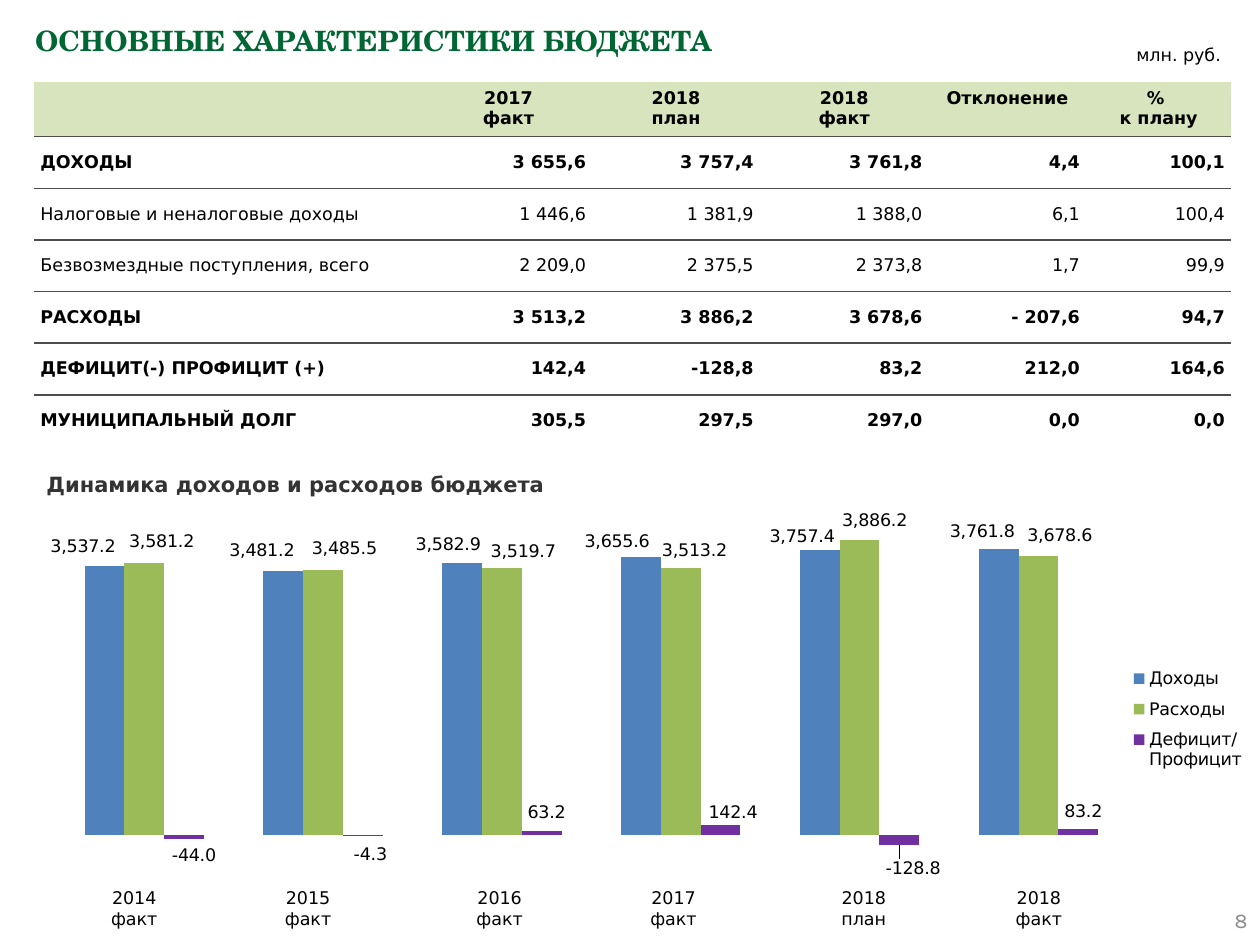
from dataclasses import dataclass

from lxml import etree
from pptx import Presentation
from pptx.chart.data import CategoryChartData
from pptx.dml.color import RGBColor
from pptx.enum.chart import XL_CHART_TYPE, XL_LABEL_POSITION, XL_LEGEND_POSITION
from pptx.enum.shapes import MSO_SHAPE
from pptx.enum.text import MSO_ANCHOR, PP_ALIGN
from pptx.oxml.ns import qn
from pptx.util import Inches, Pt

LEFT, CENTER, RIGHT = PP_ALIGN.LEFT, PP_ALIGN.CENTER, PP_ALIGN.RIGHT
TOP, MIDDLE = MSO_ANCHOR.TOP, MSO_ANCHOR.MIDDLE
COLUMNS = XL_CHART_TYPE.COLUMN_CLUSTERED
OUTSIDE = XL_LABEL_POSITION.OUTSIDE_END
LEGEND_RIGHT = XL_LEGEND_POSITION.RIGHT
TAG = MSO_SHAPE.PENTAGON

COLORS = {"title": "006633", "heading": "333333", "text": "000000", "number": "898989",
          "header": "D7E4BD", "rule": "4D4D4D",
          "income": "4F81BD", "expense": "9BBB59", "balance": "7030A0"}
SANS, SERIF, BODY = "DejaVu Sans", "TeX Gyre Schola", "Karla"
CHART_W, CHART_H = 9.69, 3.05


@dataclass
class TableRow:
    cells: list[str]
    bold: bool = True


@dataclass
class BarSeries:
    name: str
    color: str
    fmt: str
    values: list[float]
    shifts: list[tuple[float, float]]  # label offsets in inches


@dataclass
class Period:
    left: float
    caption: str


HEADER = ["", "2017\nфакт", "2018\nплан", "2018\nфакт", "Отклонение", "% \nк плану"]
ROWS = [
    TableRow(["ДОХОДЫ", "3 655,6", "3 757,4", "3 761,8", "4,4", "100,1"]),
    TableRow(["Налоговые и неналоговые доходы", "1 446,6", "1 381,9", "1 388,0", "6,1", "100,4"], False),
    TableRow(["Безвозмездные поступления, всего", "2 209,0", "2 375,5", "2 373,8", "1,7", "99,9"], False),
    TableRow(["РАСХОДЫ", "3 513,2", "3 886,2", "3 678,6", "- 207,6", "94,7"]),
    TableRow(["ДЕФИЦИТ(-) ПРОФИЦИТ (+)", "142,4", "-128,8", "83,2", "212,0", "164,6"]),
    TableRow(["МУНИЦИПАЛЬНЫЙ ДОЛГ", "305,5", "297,5", "297,0", "0,0", "0,0"]),
]
COL_WIDTHS = [3.1, 1.33, 1.33, 1.34, 1.25, 1.15]
SERIES = [
    BarSeries("Доходы", "income", "#,##0.0", [3537.2, 3481.2, 3582.9, 3655.6, 3757.4, 3761.8],
              [(-.17, -.04), (-.17, -.04), (-.11, -.03), (-.19, -.01), (-.14, .01), (-.13, -.02)]),
    BarSeries("Расходы", "expense", "#,##0.0", [3581.2, 3485.5, 3519.7, 3513.2, 3886.2, 3678.6],
              [(.14, -.05), (.17, -.06), (.17, -.01), (.11, -.02), (.12, -.04), (.17, -.04)]),
    BarSeries("Дефицит/Профицит", "balance", "0.0", [-44, -4.3, 63.2, 142.4, -128.8, 83.2],
              [(.08, .02), (.06, .03), (.04, -.03), (.1, .02), (.11, .07), (.04, -.02)]),
]
PERIODS = [Period(0.67, "2014\nфакт"), Period(2.05, "2015\nфакт"), Period(3.57, "2016\nфакт"),
           Period(4.95, "2017\nфакт"), Period(6.46, "2018\nплан"), Period(7.85, "2018\nфакт")]


def rgb(name: str) -> RGBColor:
    return RGBColor.from_string(COLORS[name])


def set_font(font, size: float = 10, name: str = SANS, color: str = "text", bold: bool = False) -> None:
    font.size, font.name, font.bold = Pt(size), name, bold
    font.color.rgb = rgb(color)


def write(tf, text: str, align=LEFT, spacing: float | None = None, **font) -> None:
    for i, line in enumerate(text.split("\n")):
        p = tf.paragraphs[0] if i == 0 else tf.add_paragraph()
        p.alignment = align
        if spacing:
            p.line_spacing = spacing
        r = p.add_run()
        r.text = line
        set_font(r.font, **font)


def add_text(s, box: tuple, text: str, anchor=TOP, wrap: bool = True, **fmt) -> None:
    tf = s.shapes.add_textbox(*map(Inches, box)).text_frame
    tf.word_wrap, tf.vertical_anchor = wrap, anchor
    write(tf, text, **fmt)


def set_borders(cell, ruled: set[str]) -> None:
    tc_pr = cell._tc.get_or_add_tcPr()
    for side in "LRTB":
        ln = etree.SubElement(tc_pr, qn(f"a:ln{side}"), w=str(Pt(1)))
        if side in ruled:
            fill = etree.SubElement(ln, qn("a:solidFill"))
            etree.SubElement(fill, qn("a:srgbClr"), val=COLORS["rule"])
        else:
            etree.SubElement(ln, qn("a:noFill"))


def add_budget_table(s) -> None:
    rows = [TableRow(HEADER), *ROWS]
    frame = s.shapes.add_table(len(rows), len(HEADER), Inches(0.27), Inches(0.65),
                               Inches(9.51), Inches(2.87))
    table = frame.table
    table.first_row = table.horz_banding = False
    for col, width in zip(table.columns, COL_WIDTHS):
        col.width = Inches(width)
    for i, row in enumerate(rows):
        table.rows[i].height = Inches(0.41 if i else 0.3)
        ruled = ({"T"} if i else set()) | ({"B"} if i < len(rows) - 1 else set())
        for j, text in enumerate(row.cells):
            cell = table.cell(i, j)
            cell.margin_left = cell.margin_right = Inches(0.05)
            cell.margin_top = cell.margin_bottom = Inches(0.05)
            cell.vertical_anchor = MIDDLE if i else TOP
            set_borders(cell, ruled)
            if i:
                cell.fill.background()
            else:
                cell.fill.solid()
                cell.fill.fore_color.rgb = rgb("header")
            align = CENTER if i == 0 else RIGHT if j else LEFT
            write(cell.text_frame, text, align=align, bold=row.bold)
    frame.height = Inches(2.87)


def manual_layout(**values) -> etree._Element:
    layout = etree.Element(qn("c:layout"))
    manual = etree.SubElement(layout, qn("c:manualLayout"))
    for tag, val in values.items():
        etree.SubElement(manual, qn(f"c:{tag}"), val=str(val))
    return layout


def add_label(point, fmt: str, shift: tuple[float, float]) -> None:
    label = point.data_label
    set_font(label.font)
    label.position = OUTSIDE
    idx = label._dLbl.find(qn("c:idx"))
    num_fmt = etree.Element(qn("c:numFmt"), formatCode=fmt, sourceLinked="0")
    idx.addnext(num_fmt)
    idx.addnext(manual_layout(x=shift[0] / CHART_W, y=shift[1] / CHART_H))


def add_budget_chart(s) -> None:
    data = CategoryChartData()
    data.categories = [str(n + 1) for n in range(len(PERIODS))]
    for item in SERIES:
        data.add_series(item.name, item.values)
    chart = s.shapes.add_chart(COLUMNS, Inches(0.27), Inches(4.05),
                               Inches(CHART_W), Inches(CHART_H), data).chart
    set_font(chart.font, size=18, name=BODY)
    chart.has_title = False
    # Axes
    chart.category_axis.visible = chart.value_axis.visible = False
    chart.value_axis.has_major_gridlines = False
    chart.value_axis.minimum_scale, chart.value_axis.maximum_scale = -500, 4000
    # Legend
    chart.has_legend = True
    chart.legend.position = LEGEND_RIGHT
    chart.legend.include_in_layout = False
    set_font(chart.legend.font)
    chart.legend._element.find(qn("c:legendPos")).addnext(
        manual_layout(xMode="edge", yMode="edge", x=0.89, y=0.38, w=0.11, h=0.32))
    # Plot area and bars
    area = chart._chartSpace.chart.plotArea
    for old in area.findall(qn("c:layout")):
        area.remove(old)
    area.insert(0, manual_layout(layoutTarget="inner", xMode="edge", yMode="edge",
                                 x=0.017, y=0.048, w=0.879, h=0.897))
    plot = chart.plots[0]
    plot.gap_width, plot.overlap, plot.vary_by_categories = 150, 0, False
    for series, item in zip(plot.series, SERIES):
        series.invert_if_negative = False
        series.format.fill.solid()
        series.format.fill.fore_color.rgb = rgb(item.color)
        labels = series.data_labels
        labels.show_value, labels.position = True, OUTSIDE
        labels.number_format, labels.number_format_is_linked = item.fmt, False
        set_font(labels.font)
        for i, shift in enumerate(item.shifts):
            add_label(series.points[i], item.fmt, shift)


def add_period(s, period: Period) -> None:
    sp = s.shapes.add_shape(TAG, Inches(period.left), Inches(7.1), Inches(0.79), Inches(0.21))
    sp.adjustments[0] = 0
    sp.shadow.inherit = False
    sp.fill.background()
    sp.line.fill.background()
    sp.text_frame.vertical_anchor = MIDDLE
    write(sp.text_frame, period.caption, align=CENTER)


def main() -> None:
    prs = Presentation()
    prs.slide_width, prs.slide_height = Inches(10), Inches(7.5)
    s = prs.slides.add_slide(prs.slide_layouts[6])
    # Headings and page number
    add_text(s, (0.18, 0.14, 6.02, 1.15), "ОСНОВНЫЕ ХАРАКТЕРИСТИКИ БЮДЖЕТА",
             size=16, name=SERIF, color="title", bold=True)
    add_text(s, (7.67, 7.1, 2.33, 0.4), "8", anchor=MIDDLE, align=RIGHT,
             size=12, name=BODY, color="number")
    add_text(s, (0.27, 3.65, 6.59, 0.32), "Динамика доходов и расходов бюджета",
             spacing=1.2, size=12, color="heading", bold=True)
    # Chart, table and period captions
    add_budget_chart(s)
    add_budget_table(s)
    for period in PERIODS:
        add_period(s, period)
    add_text(s, (8.92, 0.3, 0.88, 0.27), "млн. руб.", wrap=False)
    prs.save("out.pptx")


if __name__ == "__main__":
    main()
